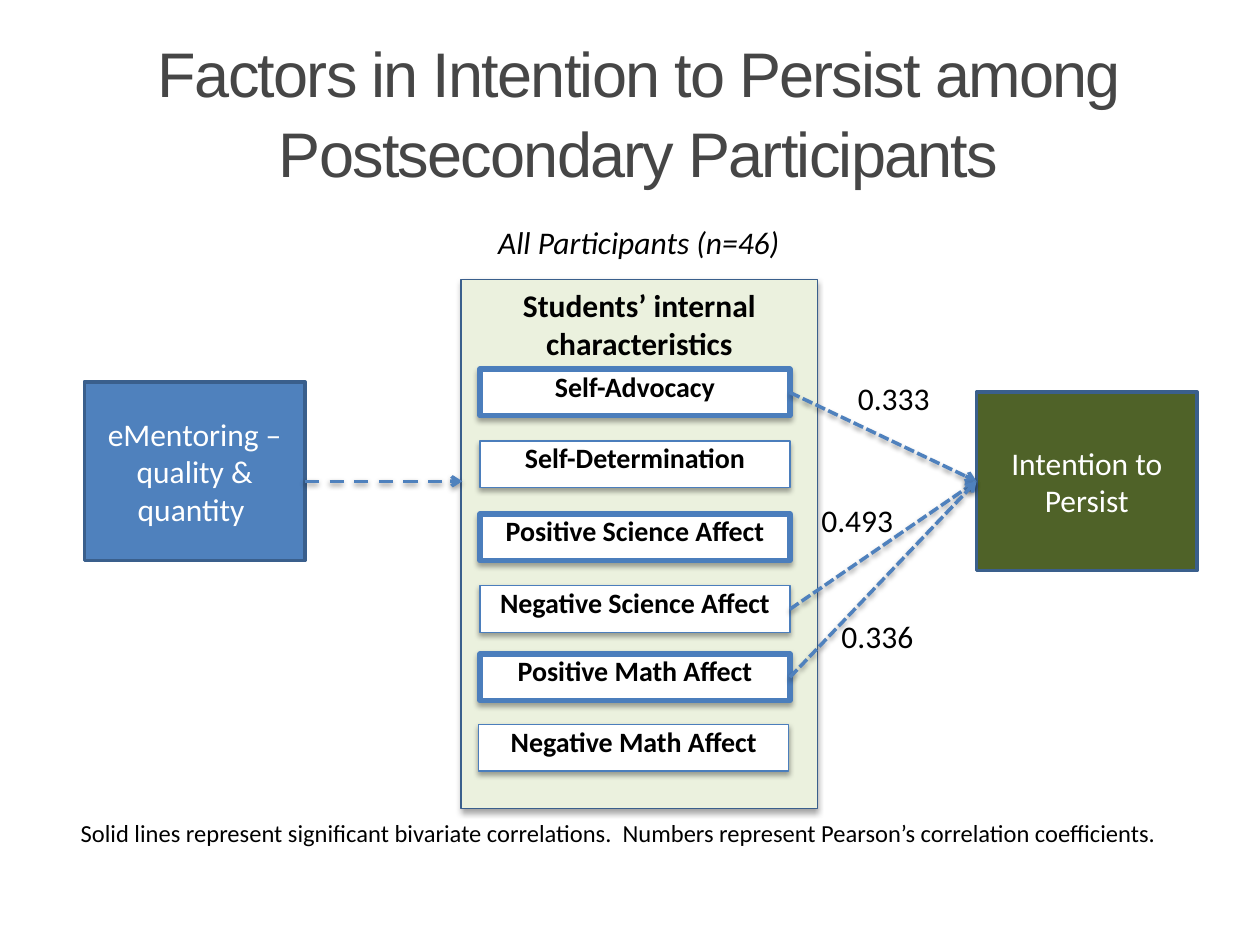
from lxml import etree
from pptx import Presentation
from pptx.dml.color import RGBColor
from pptx.enum.dml import MSO_LINE
from pptx.enum.shapes import MSO_CONNECTOR, MSO_SHAPE
from pptx.enum.text import MSO_ANCHOR, MSO_AUTO_SIZE, PP_ALIGN
from pptx.oxml.ns import qn
from pptx.util import Inches, Pt

RECTANGLE = MSO_SHAPE.RECTANGLE
STRAIGHT = MSO_CONNECTOR.STRAIGHT
DASH, SHORT_DASH = MSO_LINE.DASH, MSO_LINE.SQUARE_DOT
TOP, MIDDLE = MSO_ANCHOR.TOP, MSO_ANCHOR.MIDDLE
LEFT, CENTER = PP_ALIGN.LEFT, PP_ALIGN.CENTER
FIT_SHAPE = MSO_AUTO_SIZE.SHAPE_TO_FIT_TEXT
LEFT_SIDE, RIGHT_SIDE = 1, 3

COLORS = {
    "title": "464646", "black": "000000", "white": "FFFFFF",
    "blue": "4F81BD", "green": "4F6228", "pale": "EBF1DE",
    "border": "3A5F8C", "factor": "4B7EBC",
}


def color(name):
    return RGBColor.from_string(COLORS[name])


class SlideBuilder:
    font = "Calibri"
    size = 18

    def __init__(self, slide):
        self.shapes = slide.shapes

    def add_words(self, frame, text, ink="black", size=None, font=None,
                  bold=False, italic=False, align=CENTER):
        para = frame.paragraphs[0]
        para.alignment = align
        span = para.add_run()
        span.text = text
        span.font.name = font or self.font
        span.font.size = Pt(size or self.size)
        span.font.bold = bold
        span.font.italic = italic
        span.font.color.rgb = color(ink)
        return span

    def shadow(self, properties, opacity, distance):
        effects = properties.find(qn("a:effectLst"))
        if effects is None:
            effects = etree.SubElement(properties, qn("a:effectLst"))
        outer = etree.SubElement(
            effects, qn("a:outerShdw"), blurRad=str(Pt(3.1)),
            dist=str(Pt(distance)), dir="5400000", rotWithShape="0")
        black = etree.SubElement(outer, qn("a:srgbClr"), val=COLORS["black"])
        etree.SubElement(black, qn("a:alpha"), val=str(opacity * 1000))

    def text(self, left, top, width, height, words, **style):
        box = self.shapes.add_textbox(
            Inches(left), Inches(top), Inches(width), Inches(height))
        box.text_frame.word_wrap = True
        box.text_frame.vertical_anchor = MIDDLE
        return box.text_frame, self.add_words(box.text_frame, words, **style)

    def title(self, left, top, width, height, words):
        frame, span = self.text(left, top, width, height, words,
                                ink="title", size=36, font="Arial")
        frame.paragraphs[0].line_spacing = 1.05
        span.font._element.set("spc", "-100")

    def coefficient(self, left, top, words):
        frame, _ = self.text(left, top, 0.78, 0.4, words, align=LEFT)
        frame.word_wrap = False
        frame.vertical_anchor = TOP
        frame.auto_size = FIT_SHAPE

    def rectangle(self, left, top, width, height, words, fill, line="border",
                  weight=2, anchor=MIDDLE, shaded=False, **style):
        box = self.shapes.add_shape(
            RECTANGLE, Inches(left), Inches(top), Inches(width), Inches(height))
        box.shadow.inherit = False
        box.fill.solid()
        box.fill.fore_color.rgb = color(fill)
        box.line.color.rgb = color(line)
        box.line.width = Pt(weight)
        if shaded:
            self.shadow(box._element.spPr, 35, 1.8)
        box.text_frame.word_wrap = True
        box.text_frame.vertical_anchor = anchor
        self.add_words(box.text_frame, words, **style)
        return box

    def factor(self, left, top, words, weight):
        box = self.rectangle(left, top, 2.46, 0.37, words, "white", "factor",
                             weight, TOP, True, size=16, bold=True)
        frame = box.text_frame
        frame.margin_left = frame.margin_right = frame.margin_top = 0
        return box

    def arrow(self, start, end, dash=SHORT_DASH):
        link = self.shapes.add_connector(
            STRAIGHT, *(Inches(value) for value in (*start, *end)))
        link.line.color.rgb = color("blue")
        link.line.width = Pt(2)
        link.line.dash_style = dash
        outline = link._element.spPr.find(qn("a:ln"))
        etree.SubElement(outline, qn("a:tailEnd"), type="arrow")
        self.shadow(link._element.spPr, 38, 1.6)
        return link

    def join(self, source, target):
        link = self.arrow((0, 0), (1, 1))
        link.begin_connect(source, RIGHT_SIDE)
        link.end_connect(target, LEFT_SIDE)


def main():
    deck = Presentation()
    deck.slide_width, deck.slide_height = Inches(10), Inches(7.5)
    page = SlideBuilder(deck.slides.add_slide(deck.slide_layouts[6]))

    page.title(0.57, 0.25, 9, 1.25,
               "Factors in Intention to Persist among Postsecondary Participants")
    page.rectangle(0.67, 3.03, 1.75, 1.42, "eMentoring – quality & quantity ",
                   "blue", ink="white")
    intention = page.rectangle(7.75, 3.11, 1.75, 1.42, "Intention to Persist",
                               "green", ink="white")
    page.rectangle(3.66, 2.22, 2.83, 4.2, "Students’ internal characteristics",
                   "pale", weight=0.75, anchor=TOP, shaded=True, bold=True)

    factors = [
        (3.81, 2.93, "Self-Advocacy", 3),
        (3.81, 3.5, "Self-Determination", 0.75),
        (3.81, 4.08, "Positive Science Affect", 3),
        (3.81, 4.65, "Negative Science Affect", 0.75),
        (3.81, 5.19, "Positive Math Affect", 3),
        (3.8, 5.75, "Negative Math Affect", 0.75),
    ]
    boxes = {row[2]: page.factor(*row) for row in factors}

    page.arrow((2.42, 3.82), (3.67, 3.82), DASH)
    for name in ("Self-Advocacy", "Negative Science Affect", "Positive Math Affect"):
        page.join(boxes[name], intention)

    page.text(0.57, 1.42, 9, 1, "All Participants (n=46)", italic=True)
    for left, top, value in ((6.71, 2.96, "0.333"), (6.42, 3.93, "0.493"),
                             (6.58, 4.85, "0.336")):
        page.coefficient(left, top, value)
    page.text(0.41, 6.27, 9, 0.67,
              "Solid lines represent significant bivariate correlations.  "
              "Numbers represent Pearson’s correlation coefficients.", size=14)
    deck.save("out.pptx")


if __name__ == "__main__":
    main()
